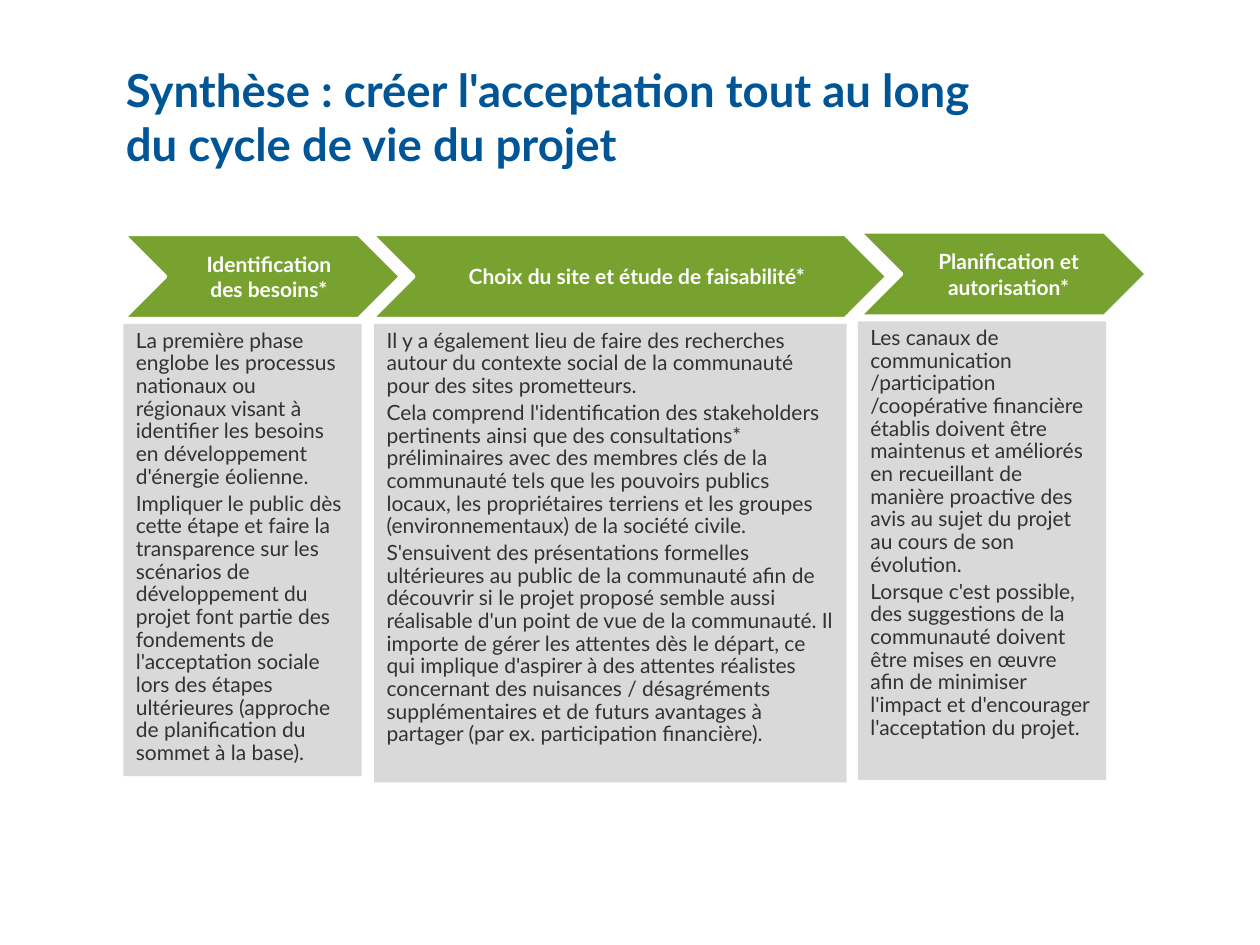
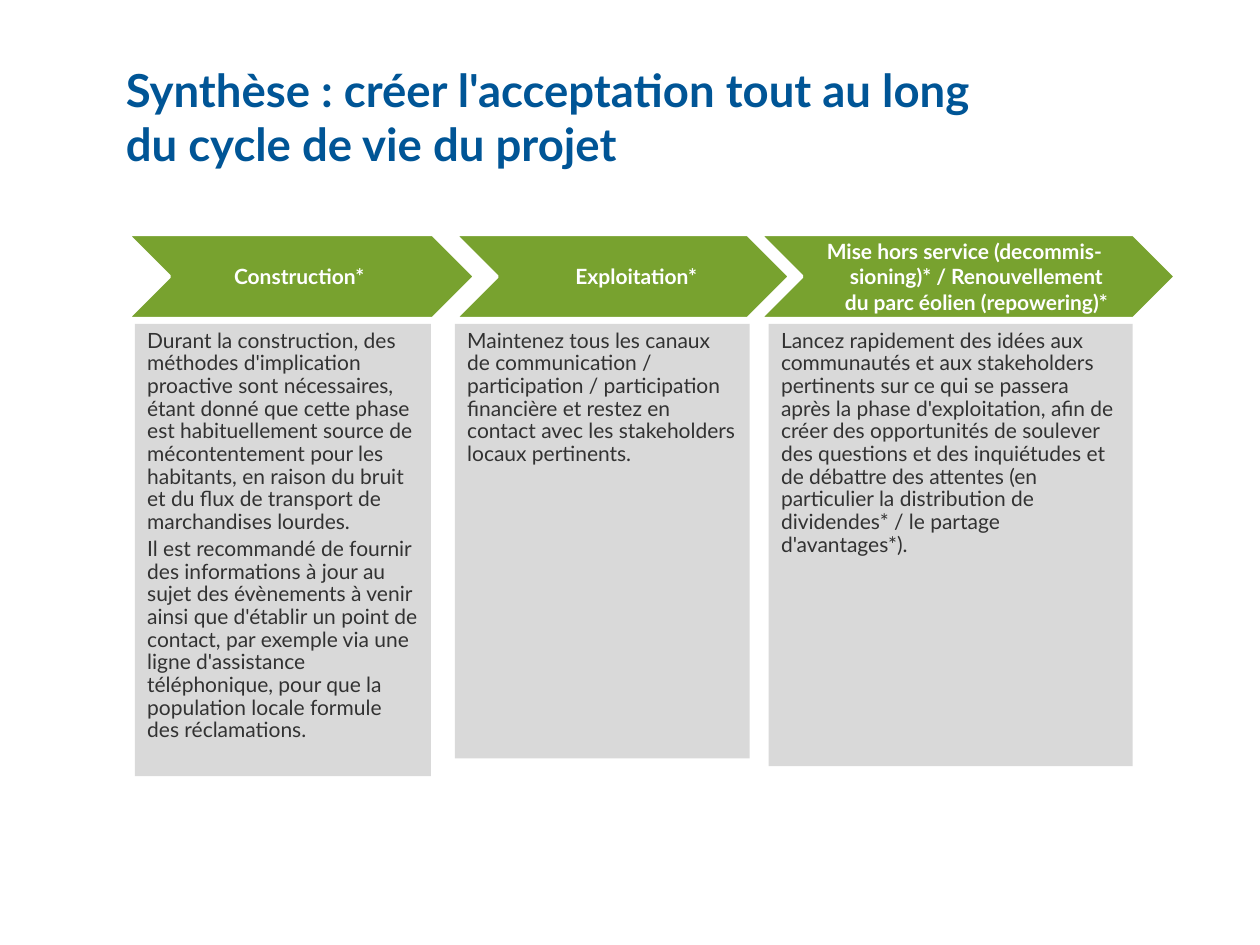
"""Two slides on building acceptance along the project life cycle."""
from dataclasses import dataclass

from pptx import Presentation
from pptx.dml.color import RGBColor
from pptx.enum.shapes import MSO_SHAPE as SHAPE
from pptx.enum.text import MSO_ANCHOR as ANCHOR, MSO_AUTO_SIZE as FIT, PP_ALIGN as ALIGN
from pptx.util import Pt

PX = 9144
FONT = "Lato"
COLORS = {"title": "005596", "band": "78A22F", "panel": "D9D9D9",
          "text": "323232", "white": "FFFFFF"}
TITLE = "Synthèse : créer l'acceptation tout au long du cycle de vie du projet"
BAND_H = 67
LABEL_INSET = 4
PANEL_DROP = 71
HANG = 19


@dataclass
class Phase:
    """One phase: x and width of its band, label and panel, then its texts."""
    band: tuple
    label: tuple
    panel: tuple
    panel_h: int
    heading: list
    body: list
    hang: int = HANG
    top: int = 186


NEEDS = Phase(
    (98, 220), (147, 130), (98, 189), 359, ["Identification des besoins*"],
    ["La première phase englobe les processus nationaux ou régionaux visant à identifier "
     "les besoins en développement d'énergie éolienne.",
     "Impliquer le public dès cette étape et faire la transparence sur les scénarios de "
     "développement du projet font partie des fondements de l'acceptation sociale lors des "
     "étapes ultérieures (approche de planification du sommet à la base)."], hang=0)
SITE = Phase(
    (295, 409), (335, 338), (297, 375), 364, ["Choix du site et étude de faisabilité*"],
    ["Il y a également lieu de faire des recherches autour du contexte social de la "
     "communauté pour des sites prometteurs.",
     "Cela comprend l'identification des stakeholders pertinents ainsi que des "
     "consultations* préliminaires avec des membres clés de la communauté tels que les "
     "pouvoirs publics locaux, les propriétaires terriens et les groupes "
     "(environnementaux) de la société civile.",
     "S'ensuivent des présentations formelles ultérieures au public de la communauté afin "
     "de découvrir si le projet proposé semble aussi réalisable d'un point de vue de la "
     "communauté. Il importe de gérer les attentes dès le départ, ce qui implique "
     "d'aspirer à des attentes réalistes concernant des nuisances / désagréments "
     "supplémentaires et de futurs avantages à partager (par ex. participation "
     "financière)."])
PLANNING = Phase(
    (682, 228), (732, 134), (681, 197), 364, ["Planification et", "autorisation*"],
    ["Les canaux de communication /participation /coopérative financière établis doivent "
     "être maintenus et améliorés en recueillant de manière proactive des avis au sujet du "
     "projet au cours de son évolution.",
     "Lorsque c'est possible, des suggestions de la communauté doivent être mises en œuvre "
     "afin de minimiser l'impact et d'encourager l'acceptation du projet."], top=184)
CONSTRUCTION = Phase(
    (101, 276), (138, 196), (107, 235), 359, ["Construction*"],
    ["Durant la construction, des méthodes d'implication proactive sont nécessaires, étant "
     "donné que cette phase est habituellement source de mécontentement pour les habitants, "
     "en raison du bruit et du flux de transport de marchandises lourdes.",
     "Il est recommandé de fournir des informations à jour au sujet des évènements à venir "
     "ainsi que d'établir un point de contact, par exemple via une ligne d'assistance "
     "téléphonique, pour que la population locale formule des réclamations."])
OPERATION = Phase(
    (361, 266), (431, 145), (361, 234), 345, ["Exploitation*"],
    ["Maintenez tous les canaux de communication / participation / participation "
     "financière et restez en contact avec les stakeholders locaux pertinents."])
RENEWAL = Phase(
    (603, 330), (642, 244), (610, 289), 351,
    ["Mise hors service (decommis-sioning)* / Renouvellement du parc éolien (repowering)*"],
    ["Lancez rapidement des idées aux communautés et aux stakeholders pertinents sur ce qui "
     "se passera après la phase d'exploitation, afin de créer des opportunités de soulever "
     "des questions et des inquiétudes et de débattre des attentes (en particulier la "
     "distribution de dividendes* / le partage d'avantages*)."])
SLIDES = [[NEEDS, SITE, PLANNING], [CONSTRUCTION, OPERATION, RENEWAL]]


def rgb(name):
    """Return the named colour."""
    return RGBColor.from_string(COLORS[name])


def emu(*lengths):
    """Scale lengths in px to EMU."""
    return [length * PX for length in lengths]


def add_block(shapes, kind, box, fill):
    """Add a filled shape without line or shadow."""
    sp = shapes.add_shape(kind, *emu(*box))
    sp.shadow.inherit = False
    sp.fill.solid()
    sp.fill.fore_color.rgb = rgb(fill)
    sp.line.fill.background()
    return sp


def write(sp, texts, size, color, bold=False, anchor=ANCHOR.TOP):
    """Write one run per paragraph and return the paragraphs."""
    tf = sp.text_frame
    tf.word_wrap = True
    tf.auto_size = FIT.NONE
    tf.vertical_anchor = anchor
    for i, text in enumerate(texts):
        p = tf.add_paragraph() if i else tf.paragraphs[0]
        p.alignment = ALIGN.LEFT
        r = p.add_run()
        r.text = text
        r.font.name, r.font.size, r.font.bold = FONT, Pt(size), bold
        r.font.color.rgb = rgb(color)
    return tf.paragraphs


def add_title(s, box):
    """Add the slide title."""
    write(s.shapes.add_textbox(*emu(*box)), [TITLE], 26, "title", bold=True)


def add_panel(s, box, texts):
    """Add the grey panel with the phase description."""
    sp = add_block(s.shapes, SHAPE.RECTANGLE, box, "panel")
    for i, p in enumerate(write(sp, texts, 12, "text")):
        p.line_spacing = 0.9
        p.space_before = Pt(2.4 if i else 0)


def add_band(s, box, label, phase):
    """Add the chevron and its centred label as one group."""
    x, y, w, h = box
    shapes = s.shapes.add_group_shape().shapes
    chevron = add_block(shapes, SHAPE.CHEVRON, box, "band")
    chevron.line.color.rgb = rgb("white")
    chevron.line.width = Pt(2)
    label_x, label_w = label
    sp = add_block(shapes, SHAPE.RECTANGLE,
                   (label_x, y + LABEL_INSET, label_w, h - 2 * LABEL_INSET), "band")
    tf = sp.text_frame
    tf.margin_left, tf.margin_top, tf.margin_right, tf.margin_bottom = emu(5, 2, 2, 2)
    for p in write(sp, phase.heading, 12, "white", bold=True, anchor=ANCHOR.MIDDLE):
        p.alignment = ALIGN.CENTER
        pPr = p._p.get_or_add_pPr()
        pPr.set("marL", str(phase.hang * PX))
        pPr.set("indent", str(-phase.hang * PX))


def add_phase_slide(prs, phases):
    """Add a slide with a title and a row of phases."""
    s = prs.slides.add_slide(prs.slide_layouts[6])
    add_title(s, (90, 44, 738, 71))
    for phase in phases:
        x, w = phase.panel
        add_panel(s, (x, phase.top + PANEL_DROP, w, phase.panel_h), phase.body)
    for phase in phases:
        x, w = phase.band
        add_band(s, (x, phase.top, w, BAND_H), phase.label, phase)


def main():
    """Build and save the presentation."""
    prs = Presentation()
    prs.slide_width, prs.slide_height = emu(1000, 750)
    for phases in SLIDES:
        add_phase_slide(prs, phases)
    prs.save("out.pptx")


if __name__ == "__main__":
    main()
